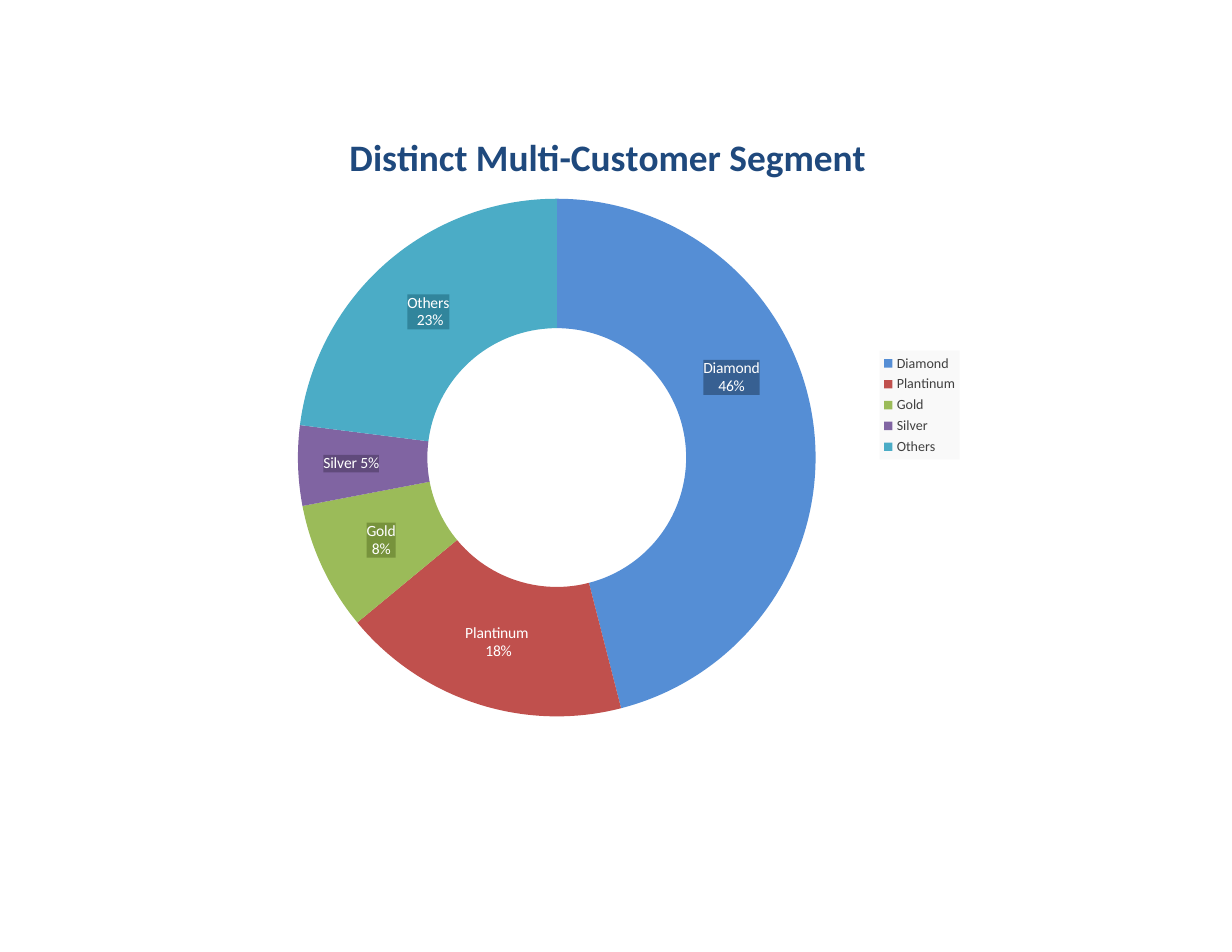
import pptx
import pptx.chart.data
import pptx.dml.color
import pptx.enum.chart
import pptx.oxml
import pptx.oxml.ns
import pptx.util

RGBColor = pptx.dml.color.RGBColor
NAVY = RGBColor(0x1F, 0x49, 0x7D)
WHITE = RGBColor(0xFF, 0xFF, 0xFF)
DARK_GRAY = RGBColor(0x40, 0x40, 0x40)
PALE_GRAY = RGBColor(0xF9, 0xF9, 0xF9)

PX = pptx.util.Inches(1) // 112
FONT = "Calibri"
CHART_BOX = (213, 97, 777, 636)
RING_BOX = (298, 199, 518, 518)
TITLE_CORNER = (343, 125)
LEGEND_BOX = (880, 351, 80, 109)

# name, percent, slice colour, label lines, label fill, label shift in px
SEGMENTS = [
    ("Diamond", 46, RGBColor(0x55, 0x8E, 0xD5), ["Diamond", "46%"],
     RGBColor(0x37, 0x60, 0x92), (-18, -56)),
    ("Plantinum", 18, RGBColor(0xC0, 0x50, 0x4D), ["Plantinum", " 18%"], None, None),
    ("Gold", 8, RGBColor(0x9B, 0xBB, 0x59), ["Gold", "8%"],
     RGBColor(0x77, 0x93, 0x3C), None),
    ("Silver", 5, RGBColor(0x80, 0x64, 0xA2), ["Silver 5%"],
     RGBColor(0x60, 0x4A, 0x7B), (-12, 0)),
    ("Others", 23, RGBColor(0x4B, 0xAC, 0xC6), ["Others", " 23%"],
     RGBColor(0x31, 0x85, 0x9C), None),
]


def chart_element(content):
    namespaces = pptx.oxml.ns.nsdecls("c", "a")
    tag, rest = content[1:].split(">", 1)
    return pptx.oxml.parse_xml(f"<{tag} {namespaces}>{rest}")


def fill_element(color):
    return chart_element(f'<c:spPr><a:solidFill><a:srgbClr val="{color}"/>'
                         "</a:solidFill></c:spPr>")


def layout_element(values, edge=True, inner=False):
    """Make a manual layout from fractions of the chart's size."""
    parts = '<c:layoutTarget val="inner"/>' if inner else ""
    if edge:
        parts += '<c:xMode val="edge"/><c:yMode val="edge"/>'
    for name, value in zip("xywh", values):
        parts += f'<c:{name} val="{value:.3f}"/>'
    return chart_element(f"<c:layout><c:manualLayout>{parts}</c:manualLayout></c:layout>")


def place(parent, layout, after=None):
    """Replace the parent's layout; put it first, or right after a given child."""
    for old in parent.findall(pptx.oxml.ns.qn("c:layout")):
        parent.remove(old)
    if after is None:
        parent.insert(0, layout)
    else:
        after.addnext(layout)


def style(font, size, color, bold=False):
    font.name = FONT
    font.size = pptx.util.Pt(size)
    font.bold = bold
    font.color.rgb = color


def write_lines(text_frame, lines, size, color, bold=False):
    # Rich chart text takes its look from its runs.
    for index, line in enumerate(lines):
        paragraph = text_frame.paragraphs[0] if index == 0 else text_frame.add_paragraph()
        run = paragraph.add_run()
        run.text = line
        style(run.font, size, color, bold)


def add_segment_label(point, lines, fill, shift, size):
    write_lines(point.data_label.text_frame, lines, 10, WHITE)
    label = point.data_label._dLbl
    if fill is not None:
        label.find(pptx.oxml.ns.qn("c:tx")).addnext(fill_element(fill))
    if shift is not None:
        fractions = [shift[0] / size[0], shift[1] / size[1]]
        place(label, layout_element(fractions, edge=False),
              label.find(pptx.oxml.ns.qn("c:idx")))


def add_segment_chart(slide, box):
    left, top, width, height = box

    def fractions(part):
        x, y, *size = part
        result = [(x - left) / width, (y - top) / height]
        if size:
            result += [size[0] / width, size[1] / height]
        return result

    data = pptx.chart.data.CategoryChartData()
    data.categories = [segment[0] for segment in SEGMENTS]
    data.add_series("Series 1", [segment[1] for segment in SEGMENTS])
    chart = slide.shapes.add_chart(
        pptx.enum.chart.XL_CHART_TYPE.DOUGHNUT, *(length * PX for length in box), data).chart
    chart.font.name = FONT
    chart.font.size = pptx.util.Pt(10)

    title = chart.chart_title
    write_lines(title.text_frame, ["Distinct Multi-Customer Segment "], 24, NAVY, True)
    title_xml = title._element
    place(title_xml, layout_element(fractions(TITLE_CORNER)),
          title_xml.find(pptx.oxml.ns.qn("c:tx")))

    chart.has_legend = True
    legend = chart.legend
    legend.position = pptx.enum.chart.XL_LEGEND_POSITION.RIGHT
    legend.include_in_layout = False
    style(legend.font, 9, DARK_GRAY)
    legend_xml = legend._element
    place(legend_xml, layout_element(fractions(LEGEND_BOX)),
          legend_xml.find(pptx.oxml.ns.qn("c:legendPos")))
    legend_xml.find(pptx.oxml.ns.qn("c:overlay")).addnext(fill_element(PALE_GRAY))

    plot = chart.plots[0]
    plot.vary_by_categories = True
    plot_area = chart._chartSpace.chart.plotArea
    place(plot_area, layout_element(fractions(RING_BOX), inner=True))
    for index, (_, _, color, lines, fill, shift) in enumerate(SEGMENTS):
        point = plot.series[0].points[index]
        point.format.fill.solid()
        point.format.fill.fore_color.rgb = color
        add_segment_label(point, lines, fill, shift, (width, height))


def main():
    presentation = pptx.Presentation()
    presentation.slide_width = pptx.util.Inches(11)
    presentation.slide_height = pptx.util.Inches(8.5)
    slide = presentation.slides.add_slide(presentation.slide_layouts[6])
    add_segment_chart(slide, CHART_BOX)
    presentation.save("out.pptx")


if __name__ == "__main__":
    main()
